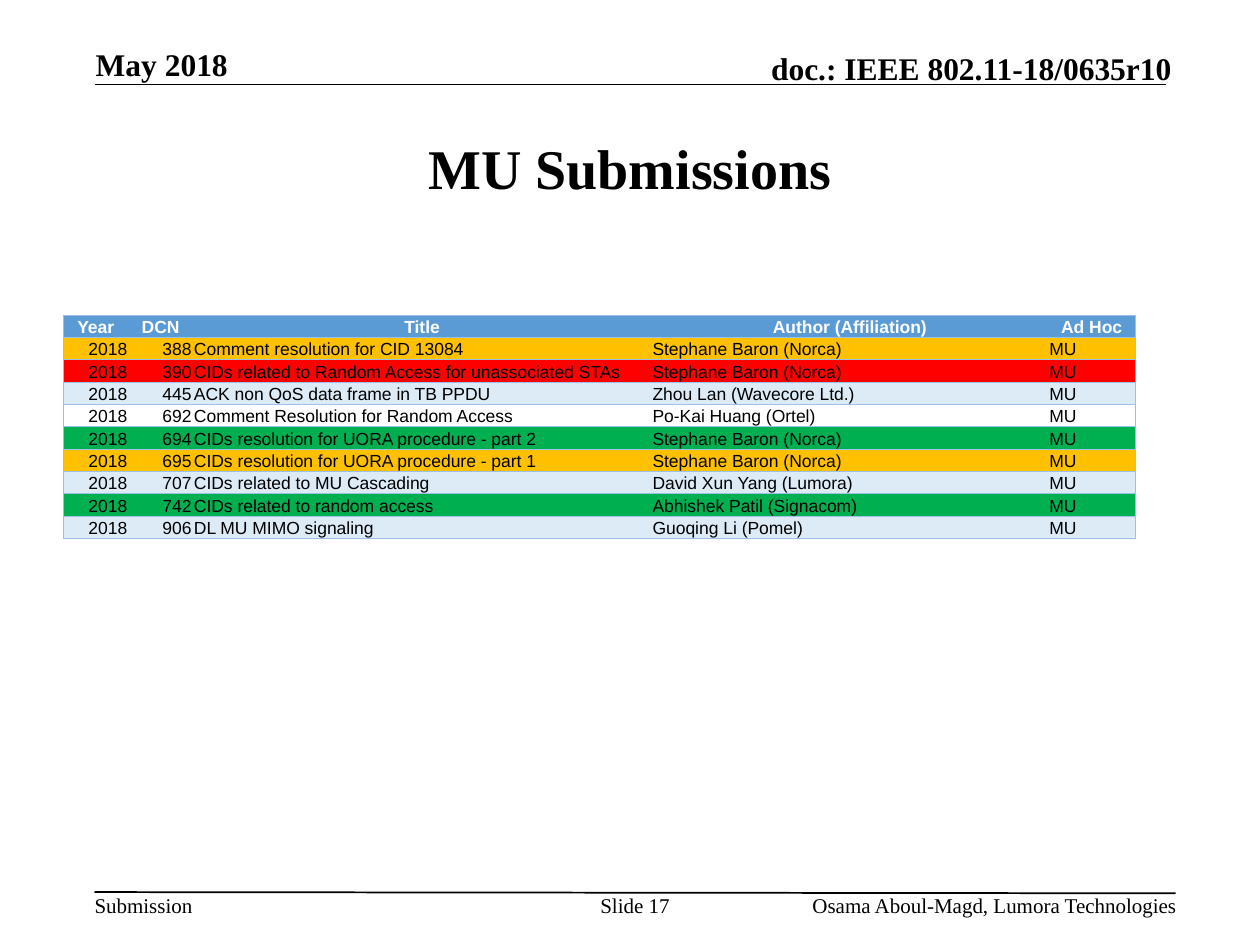
from lxml import etree
from pptx import Presentation
from pptx.dml.color import RGBColor
from pptx.enum.shapes import MSO_CONNECTOR
from pptx.enum.text import MSO_ANCHOR, PP_ALIGN
from pptx.oxml.ns import qn
from pptx.util import Inches, Pt

LEFT, CENTER, RIGHT = PP_ALIGN.LEFT, PP_ALIGN.CENTER, PP_ALIGN.RIGHT
TOP, MIDDLE, BOTTOM = MSO_ANCHOR.TOP, MSO_ANCHOR.MIDDLE, MSO_ANCHOR.BOTTOM
STRAIGHT = MSO_CONNECTOR.STRAIGHT
COLORS = {
    "black": "000000", "white": "FFFFFF", "header": "5B9BD5", "border": "9BC2E6",
    "amber": "FFC000", "red": "FF0000", "pale": "DDEBF7", "green": "00B050",
}


def style_paragraph(paragraph, size, font_name, align, bold=False, color="black"):
    paragraph.alignment = align
    paragraph.font.size = Pt(size)
    paragraph.font.name = font_name
    paragraph.font.bold = bold
    paragraph.font.color.rgb = RGBColor.from_string(COLORS[color])


def border_line(side, visible):
    line = etree.Element(qn(f"a:ln{side}"), w=str(Pt(0.5)))
    if visible:
        fill = etree.SubElement(line, qn("a:solidFill"))
        etree.SubElement(fill, qn("a:srgbClr"), val=COLORS["border"])
    else:
        etree.SubElement(line, qn("a:noFill"))
    return line


prs = Presentation()
prs.slide_width, prs.slide_height = Inches(10), Inches(7.5)
slide = prs.slides.add_slide(prs.slide_layouts[5])

title = slide.shapes.title
title.left, title.top = Inches(0.75), Inches(0.75)
title.width, title.height = Inches(8.5), Inches(1.16)
title.text_frame.text = "MU Submissions"
title.text_frame.vertical_anchor = MIDDLE
style_paragraph(title.text_frame.paragraphs[0], 32, "Times New Roman", CENTER, True)

for x1, y1, x2, y2 in [(0.75, 0.67, 9.25, 0.67), (0.75, 7.08, 9.33, 7.09)]:
    rule = slide.shapes.add_connector(STRAIGHT, Inches(x1), Inches(y1), Inches(x2), Inches(y2))
    rule.line.color.rgb = RGBColor.from_string(COLORS["black"])
    rule.line.width = Pt(1)
    etree.SubElement(rule._element.spPr, qn("a:effectLst"))

margin_texts = [
    ("May 2018", 0.76, 0.36, 2.05, 0.3, 18, LEFT, BOTTOM),
    ("doc.: IEEE 802.11-18/0635r10", 5.47, 0.39, 3.83, 0.3, 18, RIGHT, BOTTOM),
    ("Submission", 0.75, 7.08, 0.78, 0.2, 12, LEFT, TOP),
    ("Slide 17", 4.75, 7.08, 0.58, 0.4, 12, CENTER, TOP),
    ("Osama Aboul-Magd, Lumora Technologies", 5.86, 7.08, 3.48, 0.2, 12, RIGHT, TOP),
]
for text, x, y, width, height, size, align, anchor in margin_texts:
    label = slide.shapes.add_textbox(Inches(x), Inches(y), Inches(width), Inches(height))
    frame = label.text_frame
    frame.margin_left = frame.margin_right = frame.margin_top = frame.margin_bottom = 0
    frame.word_wrap = text not in ("Submission", "Slide 17")
    frame.vertical_anchor = anchor
    frame.text = text
    style_paragraph(frame.paragraphs[0], size, "Times New Roman", align, size == 18)

headings = ["Year", "DCN", "Title", "Author (Affiliation)", "Ad Hoc"]
submissions = [
    ("388", "Comment resolution for CID 13084", "Stephane Baron (Norca)", "amber"),
    ("390", "CIDs related to Random Access for unassociated STAs", "Stephane Baron (Norca)", "red"),
    ("445", "ACK non QoS data frame in TB PPDU", "Zhou Lan (Wavecore Ltd.)", "pale"),
    ("692", "Comment Resolution for Random Access", "Po-Kai Huang (Ortel)", "white"),
    ("694", "CIDs resolution for UORA procedure - part 2", "Stephane Baron (Norca)", "green"),
    ("695", "CIDs resolution for UORA procedure - part 1", "Stephane Baron (Norca)", "amber"),
    ("707", "CIDs related to MU Cascading", "David Xun Yang (Lumora)", "pale"),
    ("742", "CIDs related to random access", "Abhishek Patil (Signacom)", "green"),
    ("906", "DL MU MIMO signaling", "Guoqing Li (Pomel)", "pale"),
]
rows = [(headings, "header")]
rows += [(["2018", dcn, topic, author, "MU"], status) for dcn, topic, author, status in submissions]
column_widths = [0.52, 0.51, 3.64, 3.15, 0.69]
column_aligns = [RIGHT, RIGHT, LEFT, LEFT, LEFT]
last_column = len(headings) - 1

table = slide.shapes.add_table(
    len(rows), len(headings), Inches(0.5), Inches(2.5), Inches(8.5), Inches(1.74)
).table
table.first_row = table.horz_banding = False
for column, width in zip(table.columns, column_widths):
    column.width = Inches(width)

for row_index, (values, status) in enumerate(rows):
    is_header = status == "header"
    for column_index, value in enumerate(values):
        cell = table.cell(row_index, column_index)
        cell.text = value
        cell.vertical_anchor = BOTTOM
        cell.margin_left = cell.margin_right = cell.margin_top = Inches(0.01)
        cell.margin_bottom = 0
        cell.fill.solid()
        cell.fill.fore_color.rgb = RGBColor.from_string(COLORS[status])
        align = CENTER if is_header else column_aligns[column_index]
        style_paragraph(cell.text_frame.paragraphs[0], 10, "Arial", align, is_header,
                        "white" if is_header else "black")
        edges = {"L": column_index == 0, "R": column_index == last_column, "T": True, "B": True}
        for position, (side, visible) in enumerate(edges.items()):
            cell._tc.get_or_add_tcPr().insert(position, border_line(side, visible))

prs.save("out.pptx")
